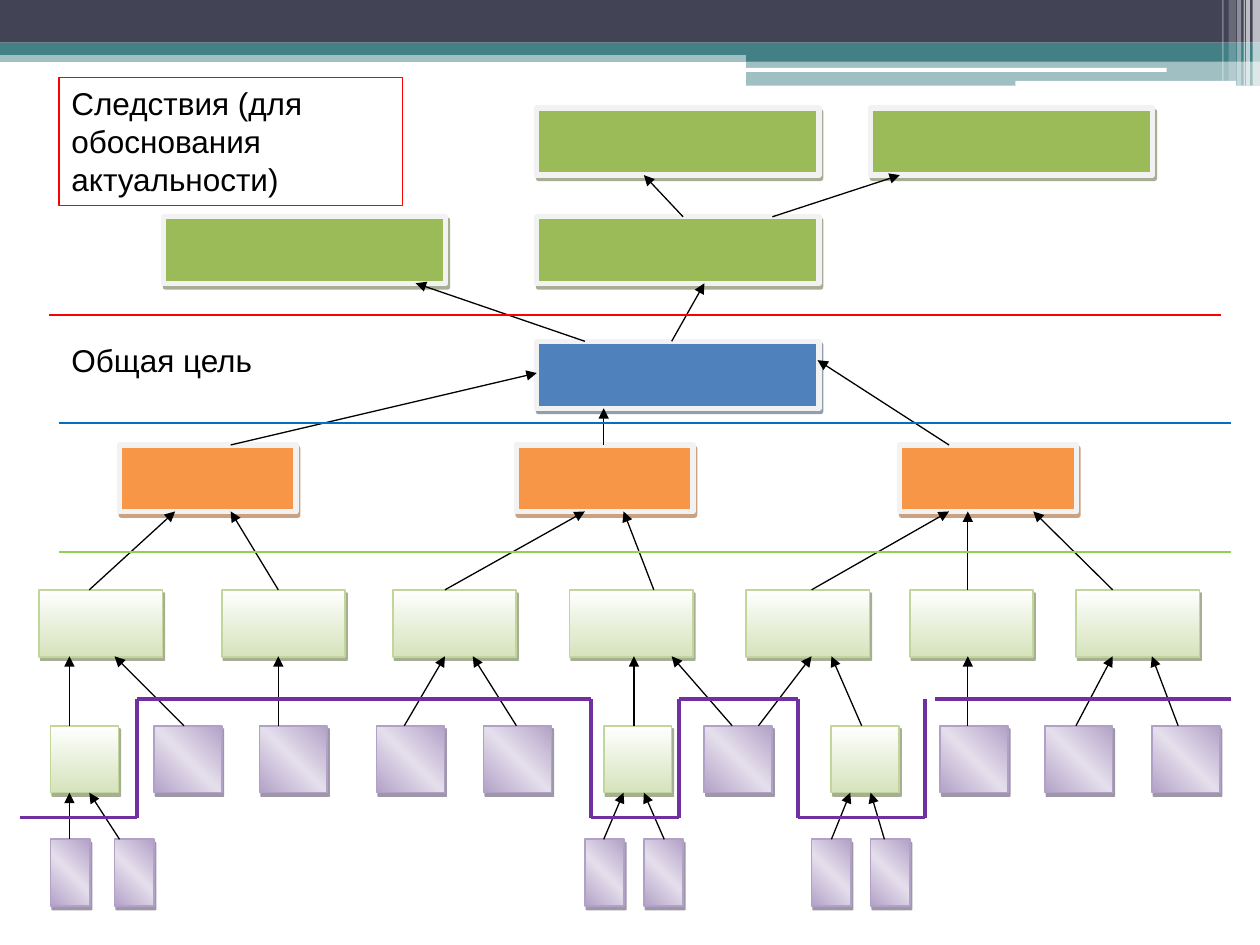
import itertools

import pptx
import pptx.dml.color
import pptx.enum.shapes
import pptx.enum.text
import pptx.oxml.ns
import pptx.oxml.xmlchemy
import pptx.util

COLORS = {
    "black": "000000", "white": "FFFFFF", "navy": "424456", "teal": "438086",
    "red": "FF0000", "blue": "0070C0", "lime": "92D050", "purple": "7030A0",
    "frame": "F2F2F2", "effect": "9BBB59", "goal": "4F81BD", "subgoal": "F79646",
    "mint": "D6E3BC", "mint edge": "C2D69B", "lilac": "B2A1C7", "pale lilac": "E5DFEC",
    "effect shadow": "4E6128", "goal shadow": "243F60",
    "subgoal shadow": "974706", "lilac shadow": "3F3151",
}
BOXES = {
    "effect": (["effect"], 0, "frame", 3, "effect shadow"),
    "goal": (["goal"], 0, "frame", 3, "goal shadow"),
    "subgoal": (["subgoal"], 0, "frame", 3, "subgoal shadow"),
    "task": (["white", "mint"], 90, "mint edge", 1, "effect shadow"),
    "step": (["lilac", "pale lilac", "lilac"], 315, "lilac", 1, "lilac shadow"),
}
BOX_H = 0.53


def length(inches):
    return pptx.util.Cm(round(inches * 2.54, 2))


def rgb(name):
    return pptx.dml.color.RGBColor.from_string(COLORS[name])


def sub(parent, tag, **attrs):
    child = pptx.oxml.xmlchemy.OxmlElement(tag)
    for key, value in attrs.items():
        child.set(key, str(value))
    parent.append(child)
    return child


class Board:
    font = "Arial"
    size = 18

    def __init__(self, s):
        self.s = s
        self.shapes = s.shapes

    def start_group(self):
        self.shapes = self.s.shapes.add_group_shape().shapes

    def end_group(self):
        self.shapes = self.s.shapes

    def shape(self, x, y, w, h, kind="RECTANGLE"):
        sp = self.shapes.add_shape(
            pptx.enum.shapes.MSO_SHAPE[kind], *map(length, (x, y, w, h)))
        sp.shadow.inherit = False
        return sp

    def band(self, x, y, w, h, color, alpha=100, kind="RECTANGLE"):
        sp = self.shape(x, y, w, h, kind)
        sp.fill.solid()
        sp.fill.fore_color.rgb = rgb(color)
        sp.line.fill.background()
        if alpha < 100:
            tint = sp.element.spPr.find(".//" + pptx.oxml.ns.qn("a:srgbClr"))
            sub(tint, "a:alpha", val=alpha * 1000)

    def box(self, x, y, w, style):
        colors, angle, edge, weight, shade = BOXES[style]
        sp = self.shape(x, y, w, BOX_H)
        if len(colors) == 1:
            sp.fill.solid()
            sp.fill.fore_color.rgb = rgb(colors[0])
        else:
            self.gradient(sp, colors, angle)
        sp.line.color.rgb = rgb(edge)
        sp.line.width = pptx.util.Pt(weight)
        effects = sp.element.spPr.find(pptx.oxml.ns.qn("a:effectLst"))
        shadow = sub(effects, "a:outerShdw", blurRad=0, dist=pptx.util.Pt(2.2),
                     dir=63 * 60000, algn="ctr", rotWithShape=0)
        tint = sub(shadow, "a:srgbClr", val=COLORS[shade])
        sub(tint, "a:alpha", val=50000)

    def gradient(self, sp, colors, angle):
        sp.fill.gradient()
        sp.fill.gradient_angle = 360 - angle
        stops = sp.element.spPr.find(".//" + pptx.oxml.ns.qn("a:gsLst"))
        for stop in list(stops):
            stops.remove(stop)
        for i, color in enumerate(colors):
            stop = sub(stops, "a:gs", pos=100000 * i // (len(colors) - 1))
            sub(stop, "a:srgbClr", val=COLORS[color])

    def line(self, start, end, color="black", weight=0.75):
        c = self.shapes.add_connector(
            pptx.enum.shapes.MSO_CONNECTOR.STRAIGHT, *map(length, (*start, *end)))
        c.line.color.rgb = rgb(color)
        c.line.width = pptx.util.Pt(weight)
        sub(c.element.spPr, "a:effectLst")
        return c

    def arrow(self, start, end):
        c = self.line(start, end)
        sub(c.line._get_or_add_ln(), "a:tailEnd", type="triangle")

    def text(self, x, y, w, h, words, edge=None):
        sp = self.shapes.add_textbox(*map(length, (x, y, w, h)))
        tf = sp.text_frame
        tf.word_wrap = True
        tf.auto_size = pptx.enum.text.MSO_AUTO_SIZE.SHAPE_TO_FIT_TEXT
        tf.text = words
        r = tf.paragraphs[0].runs[0]
        r.font.name = self.font
        r.font.size = pptx.util.Pt(self.size)
        r.font.color.rgb = rgb("black")
        if edge:
            sp.line.color.rgb = rgb(edge)
            sp.line.width = pptx.util.Pt(0.75)


def draw_header(board):
    board.band(0, 0.4, 10, 0.09, "teal", 50)
    board.band(0, 0, 10, 0.34, "navy")
    board.band(0, 0.34, 10, 0.1, "teal")
    board.band(5.92, 0.39, 4.08, 0.1, "teal")
    board.band(5.92, 0.48, 4.08, 0.2, "teal", 50)
    board.band(5.91, 0.54, 3.35, 0.03, "white", kind="ROUNDED_RECTANGLE")
    board.band(8.06, 0.64, 1.75, 0.04, "white", kind="ROUNDED_RECTANGLE")
    for x, w, h, alpha in [(9.94, 0.06, 0.68, 65), (9.89, 0.03, 0.68, 65),
                           (9.87, 0.01, 0.68, 60), (9.82, 0.03, 0.68, 40),
                           (9.75, 0.06, 0.64, 20), (9.7, 0.01, 0.64, 30)]:
        board.band(x, 0, w, h, "white", alpha)


def draw_tree(board):
    top, effects, goal, subgoals, tasks, steps, details = (
        0.86, 1.72, 2.71, 3.53, 4.68, 5.76, 6.66)
    rows = [
        (top, 2.24, "effect", [4.26, 6.91]),
        (effects, 2.24, "effect", [1.3, 4.26]),
        (goal, 2.24, "goal", [4.26]),
        (subgoals, 1.4, "subgoal", [0.95, 4.1, 7.14]),
        (tasks, 0.98, "task", [0.31, 1.76, 3.12, 4.52, 5.92, 7.22, 8.54]),
        (steps, 0.54, "task", [0.4, 4.79, 6.6]),
        (steps, 0.54, "step", [1.22, 2.06, 2.99, 3.84, 5.59, 7.46, 8.29, 9.14]),
        (details, 0.31, "step", [0.4, 0.91, 4.64, 5.11, 6.44, 6.91]),
    ]
    links = [
        (details, steps, [(0.55, 0.55), (0.95, 0.71), (4.79, 4.95), (5.27, 5.11),
                          (6.6, 6.75), (7.02, 6.91)]),
        (steps, tasks, [(0.55, 0.55), (1.46, 0.91), (2.21, 2.21), (3.21, 3.53),
                        (4.1, 3.75), (5.03, 5.03), (5.81, 5.33), (6.02, 6.44),
                        (6.84, 6.6), (7.68, 7.68), (8.54, 8.83), (9.35, 9.14)]),
        (tasks, subgoals, [(0.71, 1.39), (2.21, 1.83), (3.53, 4.64), (5.19, 4.95),
                           (6.44, 7.53), (7.68, 7.68), (8.83, 8.2)]),
        (subgoals, goal, [(4.79, 4.79)]),
        (goal, effects, [(4.64, 3.3), (5.33, 5.59)]),
        (effects, top, [(5.42, 5.11), (6.13, 7.14)]),
    ]
    board.start_group()
    for y, w, style, lefts in rows:
        for x in lefts:
            board.box(x, y, w, style)
    for lower, upper, pairs in links:
        for x1, x2 in pairs:
            board.arrow((x1, lower), (x2, upper + BOX_H))
    board.arrow((1.83, subgoals), (4.26, 2.96))
    board.arrow((7.53, subgoals), (6.49, 2.86))
    board.end_group()


def draw_levels(board):
    board.line((0.39, 2.5), (9.69, 2.5), "red", 1.5)
    board.text(0.47, 0.62, 2.73, 1.01,
               "Следствия (для обоснования актуальности)", "red")
    board.line((0.47, 3.36), (9.77, 3.36), "blue", 1.5)
    board.text(0.47, 2.66, 2.11, 0.4, "Общая цель")
    board.line((0.47, 4.38), (9.77, 4.38), "lime", 1.5)


def draw_boundary(board):
    high, low = 5.55, 6.49
    points = [(0.16, low)]
    for x, y in zip([1.09, 4.69, 5.39, 6.33, 7.34], itertools.cycle([high, low])):
        points += [(x, points[-1][1]), (x, y)]
    board.start_group()
    for start, end in zip(points, points[1:]):
        board.line(start, end, "purple", 2.25)
    board.line((7.42, high), (9.77, high), "purple", 2.25)
    board.end_group()


def main():
    prs = pptx.Presentation()
    prs.slide_width, prs.slide_height = pptx.util.Cm(25.4), pptx.util.Cm(19.05)
    board = Board(prs.slides.add_slide(prs.slide_layouts[6]))
    draw_header(board)
    draw_tree(board)
    draw_levels(board)
    draw_boundary(board)
    prs.save("out.pptx")


if __name__ == "__main__":
    main()
